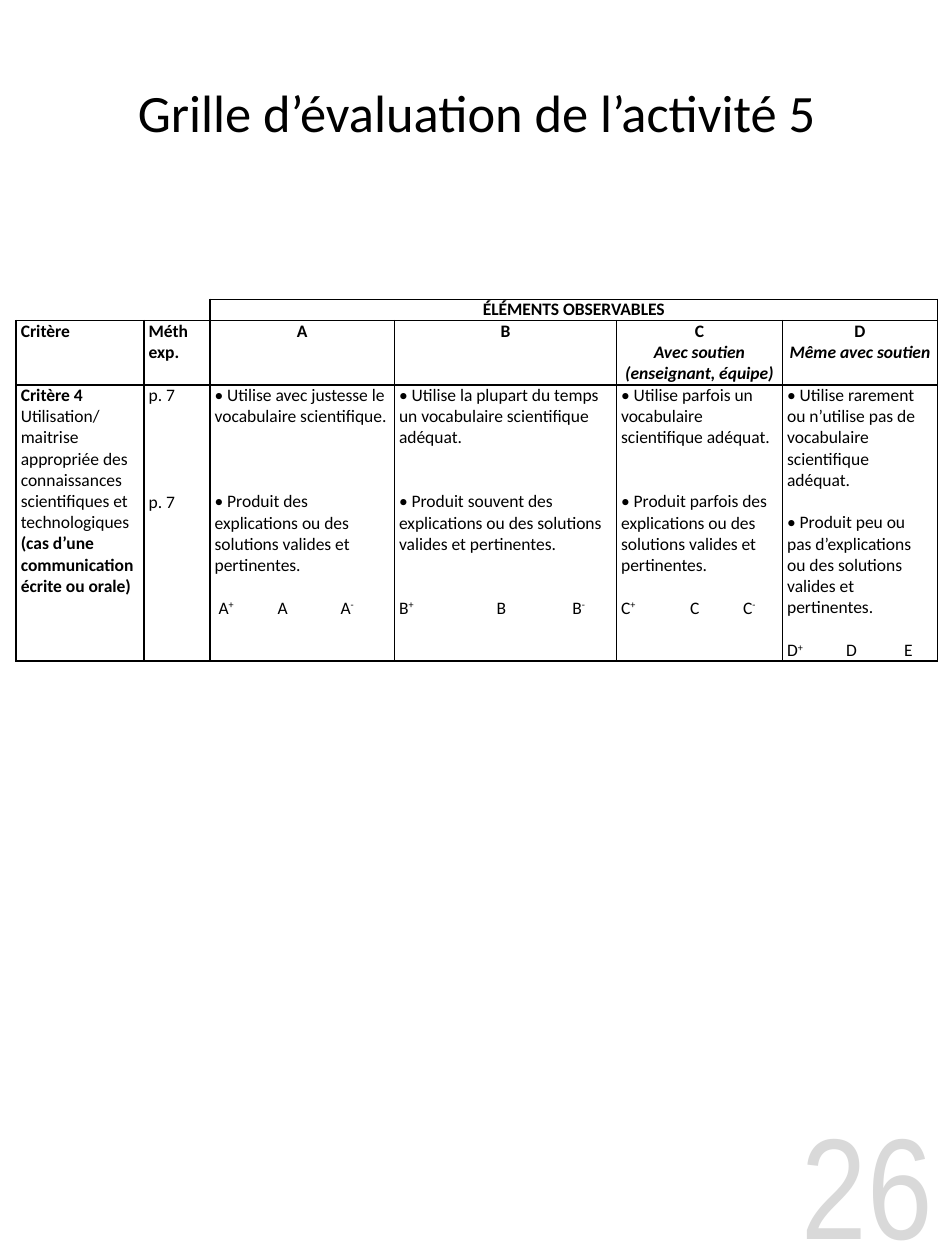
from lxml import etree
from pptx import Presentation
from pptx.dml.color import RGBColor
from pptx.enum import text
from pptx.oxml import ns
from pptx.util import Pt

BLACK = RGBColor(0x00, 0x00, 0x00)
PALE_GRAY = RGBColor(0xD9, 0xD9, 0xD9)
LINE = 12.2
COLUMN_WIDTHS = [73.1, 37.7, 105.4, 126.9, 94.9, 88.6]
ROW_HEIGHTS = [12.2, 36.7, 145.5]
CENTER = text.PP_ALIGN.CENTER
BOLD = {"bold": True}
HEADING = {"bold": True, "align": CENTER}
NOTE = {"bold": True, "italic": True, "align": CENTER}


def gap(lines):
    """Return the format for space of a number of text lines above a paragraph."""
    return {"before": lines * LINE}


HEADINGS = [
    [("Critère", BOLD)],
    [("Méth", BOLD), ("exp.", BOLD)],
    [("A", HEADING)],
    [("B", HEADING)],
    [("C", HEADING), ("Avec soutien", NOTE), ("(enseignant, équipe)", NOTE)],
    [("D", HEADING), ("Même avec soutien", NOTE)],
]

CRITERION = [
    [
        ("Critère 4", BOLD),
        ("Utilisation/maitrise", {}),
        ("appropriée des", {}),
        ("connaissances", {}),
        ("scientifiques et", {}),
        ("technologiques", {}),
        ("(cas d’une", BOLD),
        ("communication", BOLD),
        ("écrite ou orale)", BOLD),
    ],
    [("p. 7", {}), ("p. 7", gap(4))],
    [
        ("• Utilise avec justesse le", {}),
        ("vocabulaire scientifique.", {}),
        ("• Produit des explications ou des solutions valides et pertinentes.", gap(3)),
        ("A^+^\tA\tA^-", {**gap(1), "indent": 2.3, "tabs": (48.9, 79.7)}),
    ],
    [
        ("• Utilise la plupart du temps un vocabulaire scientifique adéquat.", {}),
        ("• Produit souvent des", gap(2)),
        ("explications ou des solutions", {}),
        ("valides et pertinentes.", {}),
        ("B^+^\tB\tB^-", {**gap(2), "tabs": (55.7, 99)}),
    ],
    [
        ("• Utilise parfois un vocabulaire scientifique adéquat.", {}),
        ("• Produit parfois des", gap(2)),
        ("explications ou des solutions valides et pertinentes.", {}),
        ("C^+^\tC\tC^-", {**gap(1), "tabs": (39.4, 69.7)}),
    ],
    [
        ("• Utilise rarement ou n’utilise pas de vocabulaire scientifique adéquat.", {}),
        ("• Produit peu ou pas d’explications ou des solutions valides et pertinentes.", gap(1)),
        ("D^+^\tD\tE", {**gap(1), "tabs": (33.7, 66.9)}),
    ],
]


def add_text(frame, content, size=10, font="Calibri", color=BLACK, bold=False, italic=False,
             align=text.PP_ALIGN.LEFT, before=0, indent=0, tabs=()):
    """Add a paragraph whose parts between carets are superscript."""
    paragraph = frame.add_paragraph() if frame.text else frame.paragraphs[0]
    paragraph.alignment = align
    if before:
        paragraph.space_before = Pt(before)
    properties = paragraph._p.get_or_add_pPr()
    if indent:
        properties.set("indent", str(Pt(indent)))
    if tabs:
        tab_list = etree.SubElement(properties, ns.qn("a:tabLst"))
        for position in tabs:
            etree.SubElement(tab_list, ns.qn("a:tab"), pos=str(Pt(position)), algn="l")
    for index, part in enumerate(content.split("^")):
        if part:
            run = paragraph.add_run()
            run.text = part
            run.font.name = font
            run.font.size = Pt(size)
            run.font.bold = bold
            run.font.italic = italic
            run.font.color.rgb = color
            if index % 2:
                run._r.get_or_add_rPr().set("baseline", "30000")


def set_borders(cell, hidden=()):
    """Draw black cell borders except on the hidden sides."""
    properties = cell._tc.get_or_add_tcPr()
    for index, side in enumerate("LRTB"):
        border = etree.Element(ns.qn(f"a:ln{side}"), w=str(Pt(1)))
        if side in hidden:
            etree.SubElement(border, ns.qn("a:noFill"))
        else:
            fill = etree.SubElement(border, ns.qn("a:solidFill"))
            etree.SubElement(fill, ns.qn("a:srgbClr"), val=str(BLACK))
        properties.insert(index, border)


def fill_cell(cell, lines):
    """Write formatted lines in a cell with narrow margins."""
    cell.margin_left = cell.margin_right = Pt(2.7)
    cell.margin_top = cell.margin_bottom = 0
    for content, style in lines:
        add_text(cell.text_frame, content, **style)


def add_title(slide, left, top, width, height):
    """Place the title in the given box."""
    title = slide.shapes.title
    title.left, title.top, title.width, title.height = map(Pt, (left, top, width, height))
    title.text_frame.vertical_anchor = text.MSO_ANCHOR.MIDDLE
    add_text(title.text_frame, "Grille d’évaluation de l’activité 5", size=30, align=CENTER)


def add_grid(slide, left, top):
    """Place the assessment grid with its top left corner at the given point."""
    size = map(Pt, (left, top, sum(COLUMN_WIDTHS), sum(ROW_HEIGHTS)))
    table = slide.shapes.add_table(len(ROW_HEIGHTS), len(COLUMN_WIDTHS), *size).table
    table.first_row = table.horz_banding = False
    for column, width in zip(table.columns, COLUMN_WIDTHS):
        column.width = Pt(width)
    for row, height in zip(table.rows, ROW_HEIGHTS):
        row.height = Pt(height)
    table.cell(0, 0).merge(table.cell(0, 1))
    table.cell(0, 2).merge(table.cell(0, 5))
    observables = [("ÉLÉMENTS OBSERVABLES", HEADING)]
    for row_index, contents in enumerate([[[], [], observables, [], [], []], HEADINGS, CRITERION]):
        for column_index, lines in enumerate(contents):
            cell = table.cell(row_index, column_index)
            cell.fill.background()
            set_borders(cell, "LT" if row_index == 0 and column_index < 2 else "")
            fill_cell(cell, lines or [("", {})])
            if not lines:
                cell.text_frame.paragraphs[0].font.size = Pt(10)


def add_page_number(slide, left, top, width, height):
    """Place the large page number in the given box."""
    box = slide.shapes.add_textbox(*map(Pt, (left, top, width, height)))
    box.text_frame.word_wrap = True
    box.text_frame.vertical_anchor = text.MSO_ANCHOR.MIDDLE
    add_text(box.text_frame, "26", size=82, font="Arial Narrow", color=PALE_GRAY,
             align=text.PP_ALIGN.RIGHT)


def main():
    """Build the slide and save it."""
    presentation = Presentation()
    presentation.slide_width, presentation.slide_height = Pt(540), Pt(720)
    slide = presentation.slides.add_slide(presentation.slide_layouts[5])
    add_title(slide, 9.2, 18, 526.6, 91.4)
    add_grid(slide, 9.2, 171)
    add_page_number(slide, 417, 630.7, 123, 89.3)
    presentation.save("out.pptx")


if __name__ == "__main__":
    main()
